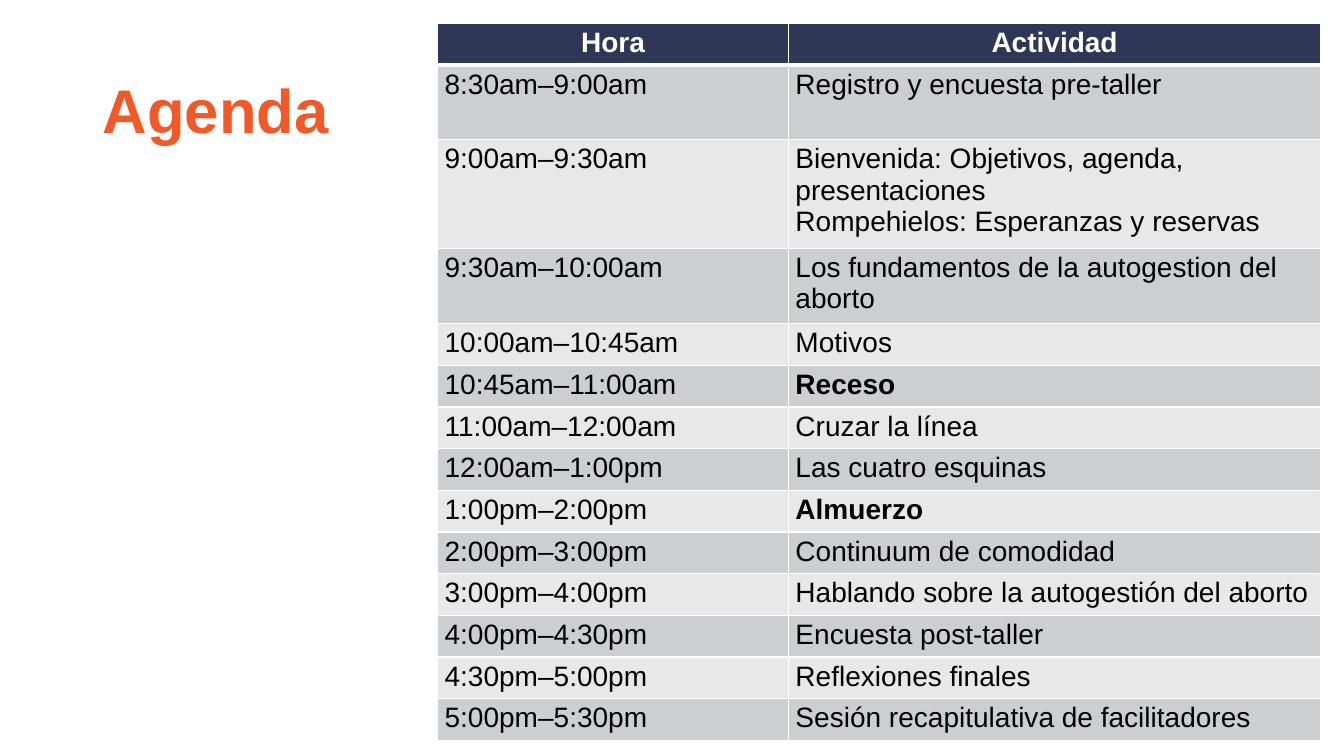
from dataclasses import dataclass

from lxml import etree
from pptx import Presentation
from pptx.dml.color import RGBColor
from pptx.enum.text import MSO_ANCHOR, PP_ALIGN
from pptx.oxml.ns import qn
from pptx.util import Inches, Pt

MIDDLE = MSO_ANCHOR.MIDDLE
CENTER = PP_ALIGN.CENTER
LEFT = PP_ALIGN.LEFT


@dataclass(frozen=True)
class Theme:
    font: str = "Arial"
    title_size: int = 44
    table_size: int = 20
    orange: str = "F15928"
    navy: str = "2E3856"
    white: str = "FFFFFF"
    black: str = "000000"
    bands: tuple = ("CDCED1", "E8E8E9")
    rule: float = 1
    header_rule: float = 3


THEME = Theme()
HEADINGS = ("Hora", "Actividad")
BREAKS = ("Receso", "Almuerzo")
SCHEDULE = [
    ("8:30am–9:00am", "Registro y encuesta pre-taller"),
    ("9:00am–9:30am", "Bienvenida: Objetivos, agenda, presentaciones\n"
                      "Rompehielos: Esperanzas y reservas"),
    ("9:30am–10:00am", "Los fundamentos de la autogestion del aborto"),
    ("10:00am–10:45am", "Motivos"),
    ("10:45am–11:00am", "Receso"),
    ("11:00am–12:00am", "Cruzar la línea"),
    ("12:00am–1:00pm", "Las cuatro esquinas"),
    ("1:00pm–2:00pm", "Almuerzo"),
    ("2:00pm–3:00pm", "Continuum de comodidad"),
    ("3:00pm–4:00pm", "Hablando sobre la autogestión del aborto"),
    ("4:00pm–4:30pm", "Encuesta post-taller"),
    ("4:30pm–5:00pm", "Reflexiones finales"),
    ("5:00pm–5:30pm", "Sesión recapitulativa de facilitadores"),
]
COLUMN_WIDTHS = (3.48, 5.28)
ROW_HEIGHTS = [0.31, 0.74, 1.08] + [0.41] * 11


def style_paragraph(paragraph, size, color, bold, align=LEFT):
    paragraph.alignment = align
    font = paragraph.font
    font.name = THEME.font
    font.size = Pt(size)
    font.bold = bold
    font.color.rgb = RGBColor.from_string(color)


def set_borders(cell, top, bottom):
    properties = cell._tc.get_or_add_tcPr()
    widths = {"lnL": THEME.rule, "lnR": THEME.rule, "lnT": top, "lnB": bottom}
    for position, (side, width) in enumerate(widths.items()):
        line = etree.Element(qn(f"a:{side}"), w=str(Pt(width)))
        fill = etree.SubElement(line, qn("a:solidFill"))
        etree.SubElement(fill, qn("a:srgbClr"), val=THEME.white)
        properties.insert(position, line)


def fill_cell(cell, content, row):
    header = row == 0
    cell.margin_left = cell.margin_right = Inches(0.07)
    cell.margin_top = cell.margin_bottom = Inches(0.04)
    cell.fill.solid()
    background = THEME.navy if header else THEME.bands[(row - 1) % 2]
    cell.fill.fore_color.rgb = RGBColor.from_string(background)
    set_borders(cell,
                top=THEME.header_rule if row == 1 else THEME.rule,
                bottom=THEME.header_rule if header else THEME.rule)
    cell.text_frame.text = content
    for paragraph in cell.text_frame.paragraphs:
        style_paragraph(paragraph, THEME.table_size,
                        THEME.white if header else THEME.black,
                        header or content in BREAKS,
                        CENTER if header else LEFT)


def add_title(slide, left, top, width, height):
    title = slide.shapes.add_textbox(
        Inches(left), Inches(top), Inches(width), Inches(height)).text_frame
    title.word_wrap = True
    title.vertical_anchor = MIDDLE
    title.text = "Agenda"
    heading = title.paragraphs[0]
    heading.line_spacing = 0.9
    style_paragraph(heading, THEME.title_size, THEME.orange, True)


def add_schedule(slide, left, top, width, height):
    rows = [HEADINGS] + SCHEDULE
    schedule = slide.shapes.add_table(
        len(rows), len(HEADINGS),
        Inches(left), Inches(top), Inches(width), Inches(height)).table
    schedule.horz_banding = False
    for column, column_width in zip(schedule.columns, COLUMN_WIDTHS):
        column.width = Inches(column_width)
    for row, row_height in zip(schedule.rows, ROW_HEIGHTS):
        row.height = Inches(row_height)
    for row, entries in enumerate(rows):
        for column, content in enumerate(entries):
            fill_cell(schedule.cell(row, column), content, row)


def main():
    presentation = Presentation()
    presentation.slide_width = Inches(13.33)
    presentation.slide_height = Inches(7.5)
    slide = presentation.slides.add_slide(presentation.slide_layouts[6])
    add_title(slide, 0.92, 0.4, 8.77, 1.45)
    add_schedule(slide, 4.34, 0.23, 8.77, 7.03)
    presentation.save("out.pptx")


if __name__ == "__main__":
    main()
